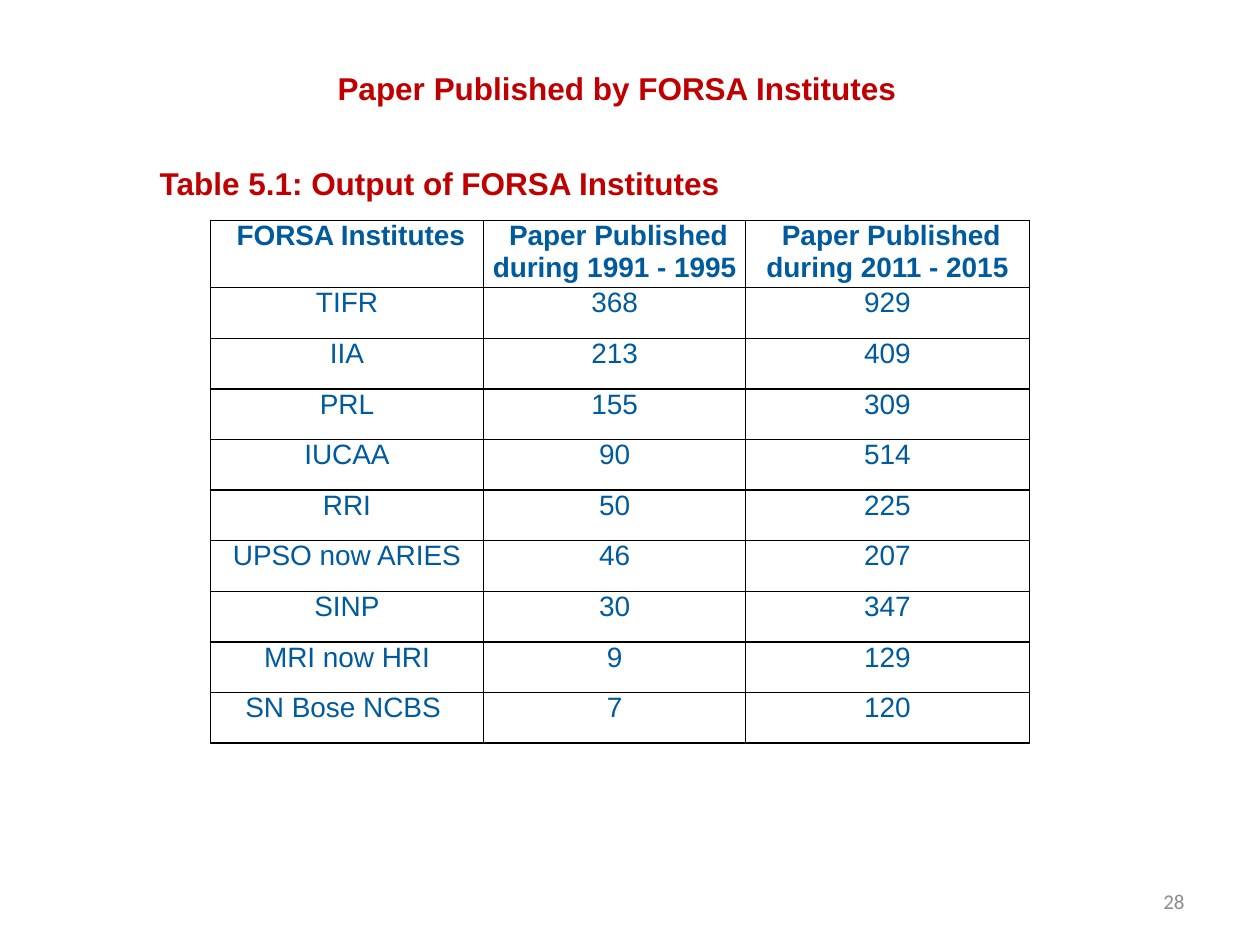
from lxml import etree
from pptx import Presentation
from pptx.dml.color import RGBColor
from pptx.enum.text import MSO_ANCHOR, MSO_AUTO_SIZE, PP_ALIGN
from pptx.oxml.ns import qn
from pptx.util import Cm, Pt

LEFT, CENTER, RIGHT = PP_ALIGN.LEFT, PP_ALIGN.CENTER, PP_ALIGN.RIGHT
TOP, MIDDLE = MSO_ANCHOR.TOP, MSO_ANCHOR.MIDDLE
NO_AUTOFIT = MSO_AUTO_SIZE.NONE
TITLE_ONLY_LAYOUT = 5

# Content
TITLE = "Paper Published by FORSA Institutes"
CAPTION = "Table 5.1: Output of FORSA Institutes"
PAGE_NUMBER = "28"
TABLE_ROWS = [
    (" FORSA Institutes", " Paper Published during 1991 - 1995",
     " Paper Published during 2011 - 2015"),
    ("TIFR", "368", "929"),
    ("IIA", "213", "409"),
    ("PRL", "155", "309"),
    ("IUCAA", "90", "514"),
    ("RRI", "50", "225"),
    ("UPSO now ARIES", "46", "207"),
    ("SINP", "30", "347"),
    ("MRI now HRI", "9", "129"),
    ("SN Bose NCBS ", "7", "120"),
]

# Theme: fonts, sizes and colours
THEME = {
    "heading": {"name": "Arial", "size": Pt(18), "bold": True, "color": "C00000"},
    "table_header": {"name": "Arial", "size": Pt(16), "bold": True, "color": "005A9E"},
    "table_body": {"name": "Arial", "size": Pt(16), "bold": False, "color": "005A9E"},
    "page_number": {"name": "Calibri", "size": Pt(12), "bold": False, "color": "8C8C8C"},
    "border": {"color": "000000", "width": Pt(1)},
}

# Layout
TITLE_BOX = (Cm(6.55), Cm(1.27), Cm(11.9), Cm(1.02))
CAPTION_BOX = (Cm(2.97), Cm(3.18), Cm(11.9), Cm(1.02))
PAGE_NUMBER_BOX = (Cm(18.2), Cm(17.65), Cm(5.93), Cm(1.02))
TABLE_LEFT, TABLE_TOP = Cm(4.24), Cm(4.45)
COLUMN_WIDTHS = [Cm(5.51), Cm(5.28), Cm(5.72)]
HEADER_HEIGHT, ROW_HEIGHT = Cm(1.35), Cm(1.02)


def write_text(text_frame, text, style, alignment):
    paragraph = text_frame.paragraphs[0]
    paragraph.alignment = alignment
    run = paragraph.add_run()
    run.text = text
    for attribute, value in THEME[style].items():
        if attribute == "color":
            run.font.color.rgb = RGBColor.from_string(value)
        else:
            setattr(run.font, attribute, value)


def fill_box(shape, box, text, style, alignment=LEFT, anchor=TOP, wrap=False):
    shape.left, shape.top, shape.width, shape.height = box
    frame_format = {"auto_size": NO_AUTOFIT, "word_wrap": wrap, "vertical_anchor": anchor}
    for attribute, value in frame_format.items():
        setattr(shape.text_frame, attribute, value)
    write_text(shape.text_frame, text, style, alignment)


def add_borders(cell):
    properties = cell._tc.get_or_add_tcPr()
    border = THEME["border"]
    for position, side in enumerate(("a:lnL", "a:lnR", "a:lnT", "a:lnB")):
        line = etree.Element(qn(side), w=str(border["width"]))
        fill = etree.SubElement(line, qn("a:solidFill"))
        etree.SubElement(fill, qn("a:srgbClr"), val=border["color"])
        properties.insert(position, line)


def add_output_table(slide):
    heights = [HEADER_HEIGHT] + [ROW_HEIGHT] * (len(TABLE_ROWS) - 1)
    table = slide.shapes.add_table(
        len(TABLE_ROWS), len(COLUMN_WIDTHS), TABLE_LEFT, TABLE_TOP,
        sum(COLUMN_WIDTHS), sum(heights)).table
    table.first_row = table.horz_banding = False
    for column, width in zip(table.columns, COLUMN_WIDTHS):
        column.width = width
    for row_index, values in enumerate(TABLE_ROWS):
        table.rows[row_index].height = heights[row_index]
        style = "table_body" if row_index else "table_header"
        for column_index, value in enumerate(values):
            cell = table.cell(row_index, column_index)
            for side in ("left", "right", "top", "bottom"):
                setattr(cell, f"margin_{side}", 0)
            cell.fill.background()
            add_borders(cell)
            write_text(cell.text_frame, value, style, CENTER)


def main():
    presentation = Presentation()
    presentation.slide_width, presentation.slide_height = Cm(25.4), Cm(19.05)
    slide = presentation.slides.add_slide(presentation.slide_layouts[TITLE_ONLY_LAYOUT])

    # Output table
    add_output_table(slide)

    # Title, table caption and page number
    fill_box(slide.shapes.title, TITLE_BOX, TITLE, "heading")
    fill_box(slide.shapes.add_textbox(*CAPTION_BOX), CAPTION_BOX, CAPTION, "heading")
    fill_box(slide.shapes.add_textbox(*PAGE_NUMBER_BOX), PAGE_NUMBER_BOX, PAGE_NUMBER,
             "page_number", RIGHT, MIDDLE, wrap=True)

    presentation.save("out.pptx")


if __name__ == "__main__":
    main()
